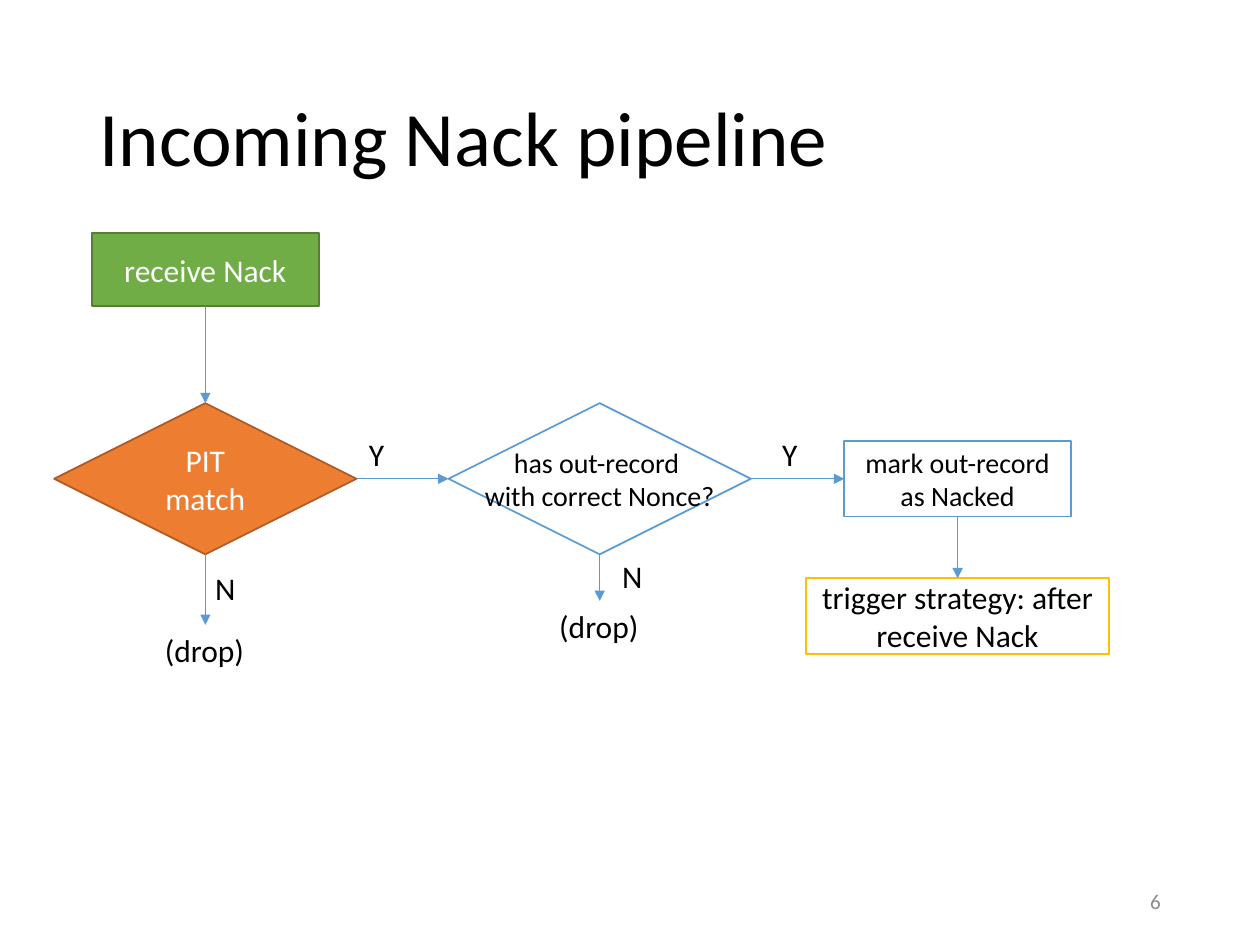
import pptx
import pptx.util
import pptx.dml.color
import pptx.enum.shapes
import pptx.enum.text
import pptx.oxml.ns
from lxml import etree

Inches = pptx.util.Inches
Pt = pptx.util.Pt
Kind = pptx.enum.shapes.MSO_SHAPE
Align = pptx.enum.text.PP_ALIGN
Anchor = pptx.enum.text.MSO_ANCHOR
TOP, LEFT, BOTTOM, RIGHT = range(4)


def color(code):
    return pptx.dml.color.RGBColor.from_string(code)


class Flow:
    font = "Calibri"
    blue = "5B9BD5"
    black = "000000"
    white = "FFFFFF"

    def __init__(self, slide):
        self.slide = slide

    def fill_text(self, frame, text, size, ink, align):
        frame.text = text
        for par in frame.paragraphs:
            par.alignment = align
            for run in par.runs:
                run.font.name = self.font
                run.font.size = Pt(size)
                run.font.color.rgb = color(ink)

    def title(self, text, x, y, w, h):
        shape = self.slide.shapes.title
        shape.left, shape.top = Inches(x), Inches(y)
        shape.width, shape.height = Inches(w), Inches(h)
        frame = shape.text_frame
        self.fill_text(frame, text, 44, self.black, Align.LEFT)
        frame.vertical_anchor = Anchor.MIDDLE
        frame.paragraphs[0].line_spacing = 0.9

    def node(self, kind, text, x, y, w, h, fill=white, line=blue,
             ink=black, size=18, wrap=True):
        shape = self.slide.shapes.add_shape(
            kind, Inches(x), Inches(y), Inches(w), Inches(h))
        shape.shadow.inherit = False
        shape.fill.solid()
        shape.fill.fore_color.rgb = color(fill)
        shape.line.color.rgb = color(line)
        shape.line.width = Pt(1)
        frame = shape.text_frame
        frame.word_wrap = wrap
        frame.vertical_anchor = Anchor.MIDDLE
        self.fill_text(frame, text, size, ink, Align.CENTER)
        return shape

    def label(self, text, x, y, w):
        box = self.slide.shapes.add_textbox(
            Inches(x), Inches(y), Inches(w), Inches(0.4))
        frame = box.text_frame
        frame.word_wrap = False
        frame.auto_size = pptx.enum.text.MSO_AUTO_SIZE.SHAPE_TO_FIT_TEXT
        self.fill_text(frame, text, 18, self.black, Align.LEFT)
        return box

    def number(self, text, x, y, w):
        box = self.slide.shapes.add_textbox(
            Inches(x), Inches(y), Inches(w), Inches(0.4))
        frame = box.text_frame
        frame.word_wrap = True
        frame.vertical_anchor = Anchor.MIDDLE
        self.fill_text(frame, text, 12, "8C8C8C", Align.RIGHT)

    def arrow(self, start, out, end, into):
        """Join side out of start to side into of end."""
        line = self.slide.shapes.add_connector(
            pptx.enum.shapes.MSO_CONNECTOR.STRAIGHT, 0, 0, 0, 0)
        line.begin_connect(start, out)
        line.end_connect(end, into)
        line.line.color.rgb = color(self.blue)
        line.line.width = Pt(0.5)
        tag = pptx.oxml.ns.qn
        props = line.element.spPr
        etree.SubElement(props.find(tag("a:ln")), tag("a:tailEnd"),
                         type="triangle")
        etree.SubElement(props, tag("a:effectLst"))


def main():
    deck = pptx.Presentation()
    deck.slide_width, deck.slide_height = Inches(10), Inches(7.5)
    flow = Flow(deck.slides.add_slide(deck.slide_layouts[5]))
    flow.title("Incoming Nack pipeline", 0.69, 0.4, 8.62, 1.45)

    start = flow.node(Kind.RECTANGLE, "receive Nack", 0.73, 1.85, 1.8, 0.58,
                      fill="70AD47", line="538035", ink=flow.white)
    match = flow.node(Kind.FLOWCHART_DECISION, "PIT match", 0.43, 3.2, 2.4, 1.2,
                      fill="ED7D31", line="AF5C24", ink=flow.white)
    nonce = flow.node(Kind.FLOWCHART_DECISION,
                      "has out-record \vwith correct Nonce?",
                      3.56, 3.2, 2.4, 1.2, size=16, wrap=False)
    mark = flow.node(Kind.RECTANGLE, "mark out-record as Nacked",
                     6.7, 3.5, 1.8, 0.6, size=16)
    after = flow.node(Kind.RECTANGLE, "trigger strategy: after receive Nack",
                      6.4, 4.59, 2.4, 0.6, line="FFC000")
    drops = [flow.label("(drop)", x, y, 0.84)
             for x, y in ((1.21, 4.96), (4.34, 4.77))]

    for text, x, y, w in (("Y", 2.83, 3.4, 0.32), ("Y", 6.11, 3.4, 0.32),
                          ("N", 1.61, 4.47, 0.36), ("N", 4.84, 4.37, 0.36)):
        flow.label(text, x, y, w)

    for upper, lower in ((start, match), (match, drops[0]),
                         (nonce, drops[1]), (mark, after)):
        flow.arrow(upper, BOTTOM, lower, TOP)
    for first, then in ((match, nonce), (nonce, mark)):
        flow.arrow(first, RIGHT, then, LEFT)

    flow.number("6", 7.06, 6.95, 2.25)
    deck.save("out.pptx")


if __name__ == "__main__":
    main()
